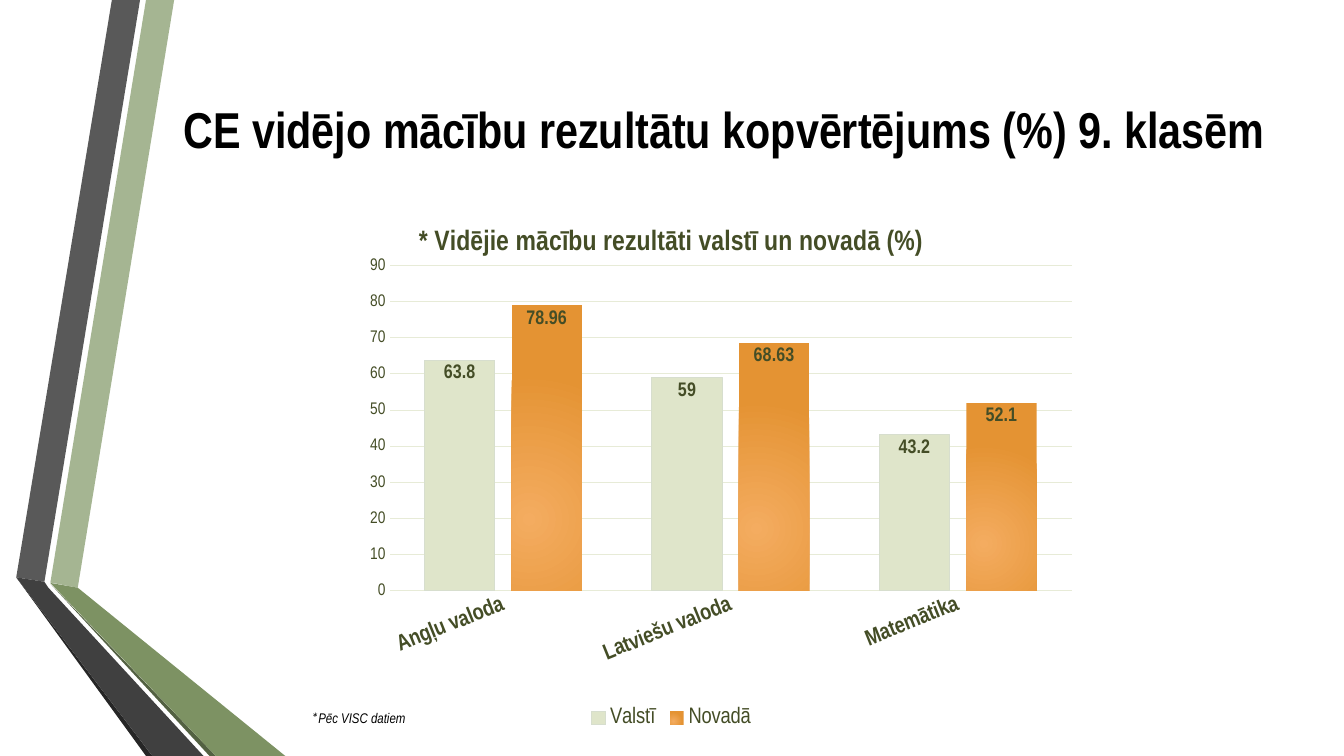
import pptx
import pptx.chart.data
import pptx.dml.color
import pptx.enum.chart
import pptx.enum.text
import pptx.oxml
import pptx.oxml.ns
import pptx.util

Cm, Pt = pptx.util.Cm, pptx.util.Pt
enum = pptx.enum.chart
FACE = "Arial Narrow"
HUES = {
    "black": "000000", "olive": "444D26", "grid": "E7EBD7",
    "state": "DFE5CA", "edge": "D7DECE", "glow": "F4AC60", "orange": "E49333",
    "sage": "A5B592", "grey": "595959", "coal": "262626",
    "moss": "536142", "leaf": "7D9263", "slate": "404040",
}


def hue(name):
    return pptx.dml.color.RGBColor.from_string(HUES[name])


def style(font, size, name="olive", bold=False):
    font.name, font.size, font.bold = FACE, Pt(size), bold
    font.color.rgb = hue(name)


deck = pptx.Presentation()
deck.slide_width, deck.slide_height = Cm(33.87), Cm(19.05)
slide = deck.slides.add_slide(deck.slide_layouts[5])
shapes = slide.shapes

# Folded ribbons on the left, in cm
END = 19.05
bands = [
    ("sage", [(1.27, 14.68), (1.96, 14.81), (4.39, 0), (3.68, 0)]),
    ("grey", [(3.53, 0), (2.82, 0), (0.41, 14.55), (1.12, 14.66)]),
    ("coal", [(0.41, 14.55), (3.68, END), (3.84, END)]),
    ("moss", [(1.27, 14.71), (5.28, END), (5.44, END)]),
    ("leaf", [(1.27, 14.69), (5.44, END), (7.19, END), (1.96, 14.81)]),
    ("slate", [(5.13, END), (1.22, 14.81), (1.12, 14.66), (0.41, 14.55),
               (3.84, END)]),
]
for name, spots in bands:
    first, *rest = [(Cm(x), Cm(y)) for x, y in spots]
    pen = shapes.build_freeform(*first)
    pen.add_line_segments(rest)
    band = pen.convert_to_shape()
    band.shadow.inherit = False
    band.fill.solid()
    band.fill.fore_color.rgb = hue(name)
    band.line.fill.background()

# Title, in front of the ribbons
title = shapes.title
title.left, title.top, title.width, title.height = (
    Cm(4.37), Cm(0.79), Cm(27.84), Cm(4.88))
frame = title.text_frame
frame.text = "CE vidējo mācību rezultātu kopvērtējums (%) 9. klasēm"
frame.auto_size = pptx.enum.text.MSO_AUTO_SIZE.NONE
frame.vertical_anchor = pptx.enum.text.MSO_ANCHOR.MIDDLE
frame.paragraphs[0].alignment = pptx.enum.text.PP_ALIGN.LEFT
style(frame.paragraphs[0].font, 36, "black", True)
shapes._spTree.append(title._element)

# Chart
data = pptx.chart.data.CategoryChartData()
data.categories = ["Angļu valoda", "Latviešu valoda", "Matemātika"]
data.add_series("Valstī", [63.8, 59, 43.2])
data.add_series("Novadā", [78.96, 68.63, 52.1])
chart = shapes.add_chart(
    enum.XL_CHART_TYPE.COLUMN_CLUSTERED,
    Cm(6.83), Cm(5.18), Cm(20.19), Cm(13.28), data).chart
style(chart.font, 10, "black")
chart.has_title = True
head = chart.chart_title.text_frame
head.text = "* Vidējie mācību rezultāti valstī un novadā (%)"
style(head.paragraphs[0].font, 20, bold=True)
chart.has_legend = True
chart.legend.position = enum.XL_LEGEND_POSITION.BOTTOM
chart.legend.include_in_layout = False
style(chart.legend.font, 16)

cats, vals = chart.category_axis, chart.value_axis
for axis in cats, vals:
    axis.major_tick_mark = axis.minor_tick_mark = enum.XL_TICK_MARK.NONE
style(cats.tick_labels.font, 16, bold=True)
cats._element.txPr.bodyPr.set("rot", "-1320000")
style(vals.tick_labels.font, 12)
vals.minimum_scale, vals.maximum_scale, vals.major_unit = 0, 90, 10
vals.format.line.fill.background()
for line in cats.format.line, vals.major_gridlines.format.line:
    line.color.rgb = hue("grid")
    line.width = Pt(0.75)

plot = chart.plots[0]
plot.gap_width, plot.overlap = 100, -24
plot.vary_by_categories = False
for bars in plot.series:
    tags = bars.data_labels
    tags.show_value = True
    tags.position = enum.XL_LABEL_POSITION.INSIDE_END
    style(tags.font, 14, bold=True)
state, county = plot.series
state.format.fill.solid()
state.format.fill.fore_color.rgb = hue("state")
state.format.line.color.rgb = hue("edge")
state.format.line.width = Pt(0.75)

# Radial fill of the county bars
NS = pptx.oxml.ns.nsdecls
county.format.line.fill.background()
county._element.spPr.insert(0, pptx.oxml.parse_xml(
    f'<a:gradFill {NS("a")}><a:gsLst>'
    f'<a:gs pos="0"><a:srgbClr val="{HUES["glow"]}"/></a:gs>'
    f'<a:gs pos="100000"><a:srgbClr val="{HUES["orange"]}"/></a:gs></a:gsLst>'
    '<a:path path="circle"><a:fillToRect l="50000" t="100000" r="100000"'
    ' b="50000"/></a:path></a:gradFill>'))

# Fixed inner plot area
area = chart._chartSpace.chart.plotArea
for old in area.findall(pptx.oxml.ns.qn("c:layout")):
    area.remove(old)
sides = {"x": 0.148, "y": 0.114, "w": 0.852, "h": 0.617}
modes = "".join(f'<c:{k}Mode val="edge"/>' for k in "xy")
sizes = "".join(f'<c:{k} val="{v}"/>' for k, v in sides.items())
area.insert(0, pptx.oxml.parse_xml(
    f'<c:layout {NS("c")}><c:manualLayout><c:layoutTarget val="inner"/>'
    f'{modes}{sizes}</c:manualLayout></c:layout>'))

# Footnote
note = shapes.add_textbox(Cm(7.59), Cm(17.73), Cm(6.78), Cm(0.74)).text_frame
note.word_wrap = True
line = note.paragraphs[0]
for text, face, size in [("*", "Calibri", 10.5), ("Pēc VISC datiem", FACE, 10)]:
    run = line.add_run()
    run.text = text
    style(run.font, size, "black")
    run.font.name, run.font.italic = face, True

deck.save("out.pptx")
